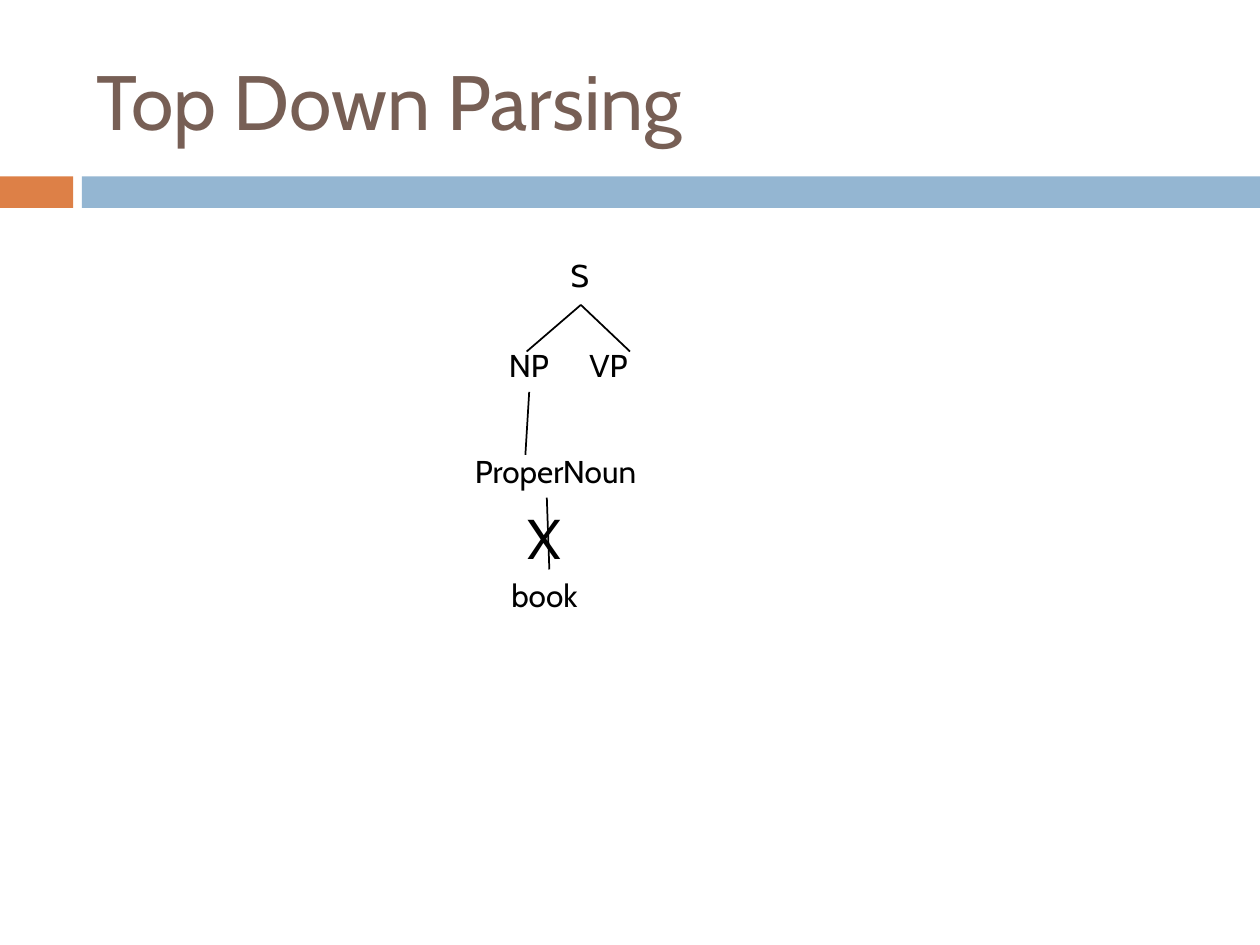
from pptx import Presentation
from pptx.dml.color import RGBColor
from pptx.enum.shapes import MSO_CONNECTOR as Connector, MSO_SHAPE as Shape
from pptx.enum.text import MSO_ANCHOR as Anchor, MSO_AUTO_SIZE as AutoSize, PP_ALIGN as Align
from pptx.oxml.ns import qn
from pptx.util import Inches, Pt

COLUMNS, ROWS = 100, 75
WIDTH, HEIGHT = Inches(10), Inches(7.5)
FONT = "Cabin"
BROWN = RGBColor(0x77, 0x5F, 0x55)
ORANGE = RGBColor(0xDD, 0x80, 0x47)
BLUE = RGBColor(0x94, 0xB6, 0xD2)
BLACK = RGBColor(0, 0, 0)
TOP, BOTTOM = 0, 2
NODE_HEIGHT = 4.4


def grid(column, row):
    return round(WIDTH * column / COLUMNS), round(HEIGHT * row / ROWS)


def write(frame, text, size=18, color=BLACK, anchor=Anchor.TOP, wrap=False):
    frame.auto_size = AutoSize.NONE if wrap else AutoSize.SHAPE_TO_FIT_TEXT
    frame.word_wrap = wrap
    frame.vertical_anchor = anchor
    para = frame.paragraphs[0]
    para.alignment = Align.LEFT
    span = para.add_run()
    span.text = text
    span.font.name = FONT
    span.font.size = Pt(size)
    span.font.color.rgb = color


def add_title(page, text):
    title = page.shapes.title
    title.left, title.top = grid(6.65, 2.5)
    title.width, title.height = grid(89.2, 10.8)
    write(title.text_frame, text, size=44, color=BROWN, anchor=Anchor.MIDDLE, wrap=True)


def add_bar(page, left, width, color):
    bar = page.shapes.add_shape(Shape.RECTANGLE, *grid(left, 14), *grid(width, 2.5))
    bar.shadow.inherit = False
    bar.fill.solid()
    bar.fill.fore_color.rgb = color
    bar.line.fill.background()


def add_node(page, text, left, top, width, height=NODE_HEIGHT, **style):
    box = page.shapes.add_textbox(*grid(left, top), *grid(width, height))
    write(box.text_frame, text, **style)
    return box


def add_branch(page, start, end, parent=None, child=None):
    branch = page.shapes.add_connector(Connector.STRAIGHT, *grid(*start), *grid(*end))
    branch.line.color.rgb = BLACK
    branch.line.width = Pt(1)
    properties = branch._element.spPr
    properties.append(properties.makeelement(qn("a:effectLst"), {}))
    if parent is not None:
        branch.begin_connect(parent, BOTTOM)
    if child is not None:
        branch.end_connect(child, TOP)


def main():
    deck = Presentation()
    deck.slide_width, deck.slide_height = WIDTH, HEIGHT
    page = deck.slides.add_slide(deck.slide_layouts[5])

    add_bar(page, 0, 5.8, ORANGE)
    add_bar(page, 6.5, 93.5, BLUE)
    add_title(page, "Top Down Parsing")

    sentence = add_node(page, "S", 44.3, 19.8, 3.6)
    add_node(page, "NP", 39.4, 27, 5.4)
    add_node(page, "VP", 45.8, 27, 5.6)
    add_node(page, "ProperNoun", 36.7, 35.4, 16.9)
    book = add_node(page, "book", 39.6, 45.2, 8)

    for child_top in ((41.8, 27.9), (50, 27.9)):
        add_branch(page, (46.1, 24.2), child_top, parent=sentence)
    add_branch(page, (42, 31.1), (41.7, 36.1))
    add_branch(page, (43.4, 39.5), (43.6, 45.2), child=book)
    add_node(page, "X", 40.9, 39.5, 5.3, height=6.4, size=32)

    deck.save("out.pptx")


if __name__ == "__main__":
    main()
